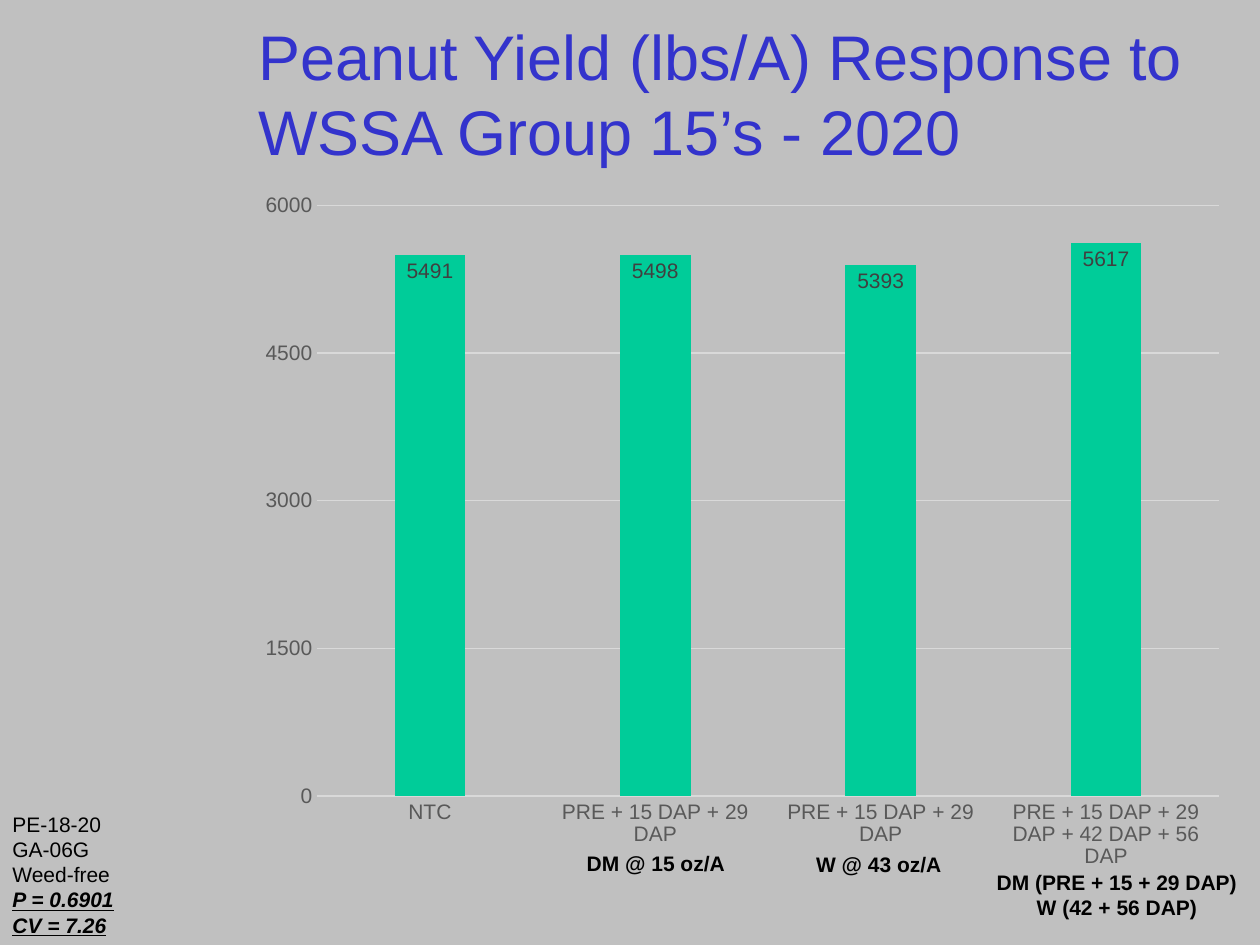
from pptx import Presentation
from pptx.chart.data import CategoryChartData
from pptx.dml.color import RGBColor
from pptx.enum.chart import XL_CHART_TYPE, XL_LABEL_POSITION, XL_TICK_MARK
from pptx.enum.text import MSO_ANCHOR, PP_ALIGN
from pptx.util import Pt

COLUMN = XL_CHART_TYPE.COLUMN_CLUSTERED
IN_END = XL_LABEL_POSITION.INSIDE_END
NO_TICK = XL_TICK_MARK.NONE
MIDDLE, TOP = MSO_ANCHOR.MIDDLE, MSO_ANCHOR.TOP
LEFT, CENTER = PP_ALIGN.LEFT, PP_ALIGN.CENTER
PX = 9144  # EMU in one px, 100 px to the inch
FACE = "Arial"


def rgb(code):
    return RGBColor.from_string(code)


def style(font, size, color):
    font.name = FACE
    font.size = Pt(size)
    font.color.rgb = rgb(color)


def rule(line, color="D9D9D9"):
    line.color.rgb = rgb(color)
    line.width = Pt(0.75)


class Deck:
    """Holds the style and the current slide."""

    def __init__(self, wide, high, back):
        self.prs = Presentation()
        self.prs.slide_width = wide * PX
        self.prs.slide_height = high * PX
        self.slide = self.prs.slides.add_slide(self.prs.slide_layouts[6])
        fill = self.slide.background.fill
        fill.solid()
        fill.fore_color.rgb = rgb(back)

    def text(self, box, lines, size=12, color="000000", bold=False,
             align=LEFT, anchor=TOP, wrap=False):
        shape = self.slide.shapes.add_textbox(*[n * PX for n in box])
        frame = shape.text_frame
        frame.word_wrap = wrap
        frame.vertical_anchor = anchor
        frame.text = "\n".join(lines)
        for para in frame.paragraphs:
            para.alignment = align
            for run in para.runs:
                style(run.font, size, color)
                run.font.bold = bold
        return frame

    def chart(self, box, name, cats, vals, color):
        data = CategoryChartData(number_format="General")
        data.categories = cats
        data.add_series(name, vals)
        chart = self.slide.shapes.add_chart(
            COLUMN, *[n * PX for n in box], data).chart
        style(chart.font, 10, "000000")
        chart.has_legend = False
        chart.has_title = False

        for axis in (chart.category_axis, chart.value_axis):
            axis.major_tick_mark = axis.minor_tick_mark = NO_TICK
            style(axis.tick_labels.font, 12, "595959")
        rule(chart.category_axis.format.line)
        scale = chart.value_axis
        scale.format.line.fill.background()
        scale.minimum_scale = 0
        scale.maximum_scale = 6000
        scale.major_unit = 1500
        rule(scale.major_gridlines.format.line)

        plot = chart.plots[0]
        plot.gap_width = 219
        plot.overlap = -27
        plot.vary_by_categories = False
        bars = plot.series[0]
        bars.format.fill.solid()
        bars.format.fill.fore_color.rgb = rgb(color)
        labels = bars.data_labels
        labels.show_value = True
        labels.position = IN_END
        style(labels.font, 12, "404040")


def main():
    deck = Deck(1000, 750, "C0C0C0")
    deck.text((195, 11, 797, 125),
              ["Peanut Yield (lbs/A) Response to WSSA Group 15’s - 2020"],
              size=36, color="3333CC", anchor=MIDDLE, wrap=True)

    early = "PRE + 15 DAP + 29 DAP"
    deck.chart((195, 143, 788, 557), "Series 1",
               ["NTC", early, early, early + " + 42 DAP + 56 DAP"],
               [5491, 5498, 5393, 5617], "00CC99")

    trial = deck.text((0, 639, 101, 111), [
        "PE-18-20", "GA-06G", "Weed-free", "P = 0.6901", "CV = 7.26"])
    for para in trial.paragraphs[-2:]:
        font = para.runs[0].font
        font.bold = font.italic = font.underline = True

    rates = [
        ((455, 670, 131, 30), ["DM @ 15 oz/A"]),
        ((637, 671, 121, 30), ["W @ 43 oz/A"]),
        ((780, 685, 213, 50), ["DM (PRE + 15 + 29 DAP)", "W (42 + 56 DAP)"]),
    ]
    for box, lines in rates:
        deck.text(box, lines, bold=True, align=CENTER)

    deck.prs.save("out.pptx")


if __name__ == "__main__":
    main()
